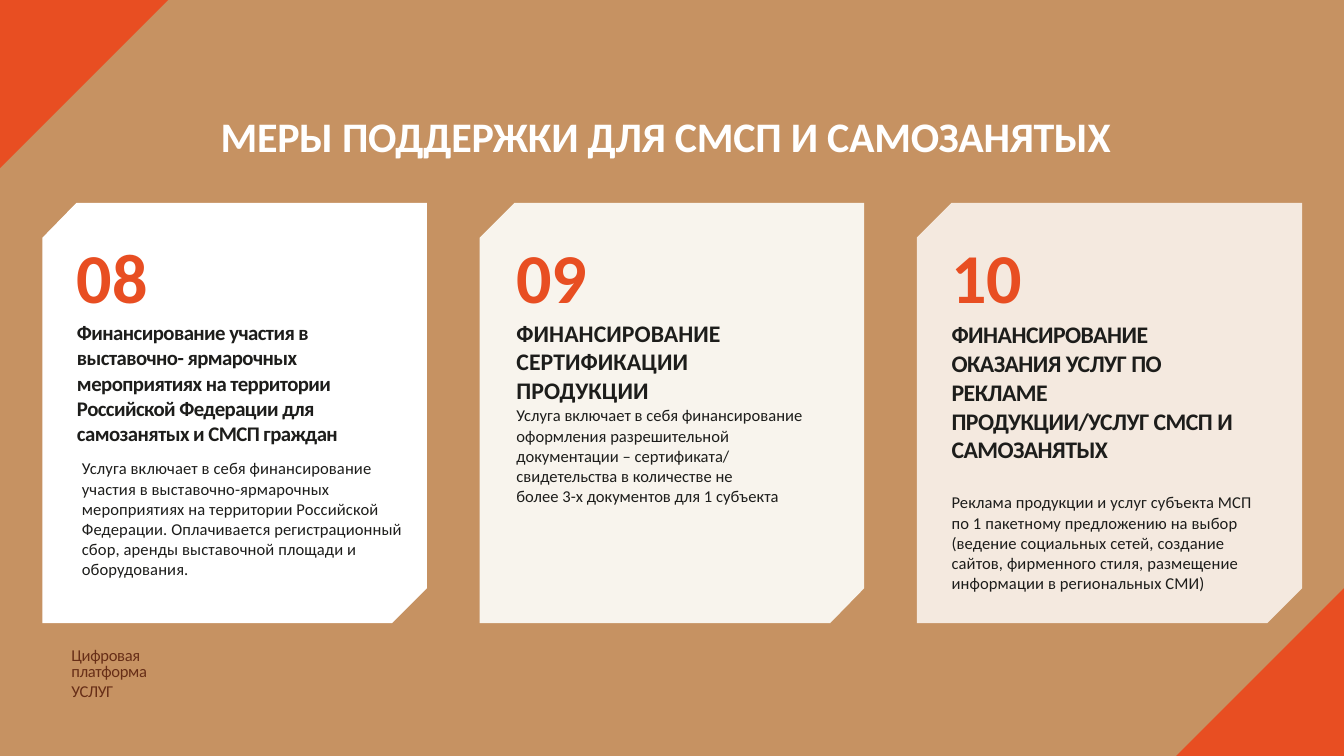
from pptx import Presentation
from pptx.dml.color import RGBColor
from pptx.enum.text import MSO_ANCHOR, PP_ALIGN
from pptx.util import Pt

TOP = MSO_ANCHOR.TOP
LEFT = PP_ALIGN.LEFT
TITLE_ONLY = 5
FONT = "Calibri"
COLORS = {
    "sand": "C69262", "orange": "E84E22", "white": "FFFFFF",
    "cream": "F8F4ED", "blush": "F4E9DF", "ink": "1D1D1B", "brown": "672E17",
}
SLIDE_W, SLIDE_H = 1583.3, 890.6
CORNER = 198
CARD_LEFT, CARD_TOP, CARD_W, CARD_H = 49.7, 239.2, 453.4, 494.6
CARD_STEP, CARD_CUT = 515.3, 40.7
TEXT_TOP = 264.2

NUMBER = dict(size=82.5, color="orange", bold=True, before=11)
HEADING = dict(size=28, color="ink", bold=True, spacing=1.01, before=2.6)
BODY = dict(size=19.5, color="ink", spacing=1.01, before=0.8)

CARDS = [
    dict(fill="white", left=90, width=402.5, height=389.5, paragraphs=[
        ("08", NUMBER),
        ("Финансирование участия в выставочно- ярмарочных мероприятиях на "
         "территории Российской Федерации для самозанятых и СМСП граждан",
         HEADING | dict(size=24.5, tracking=-0.65)),
        ("Услуга включает в себя финансирование участия в "
         "выставочно-ярмарочных мероприятиях на территории Российской "
         "Федерации. Оплачивается регистрационный сбор, аренды выставочной "
         "площади и оборудования.",
         BODY | dict(before=14.8, indent=6.5, tracking=0.1)),
    ]),
    dict(fill="cream", left=607.7, width=355.7, height=334, paragraphs=[
        ("09", NUMBER),
        ("ФИНАНСИРОВАНИЕ СЕРТИФИКАЦИИ ПРОДУКЦИИ",
         HEADING | dict(before=0.8, right=10, tracking=0.1)),
        ("Услуга включает в себя финансирование оформления разрешительной "
         "документации – сертификата/ свидетельства в количестве не",
         BODY | dict(right=10)),
        ("более 3-х документов для 1 субъекта",
         BODY | dict(spacing=1.0, before=0.2)),
    ]),
    dict(fill="blush", left=1120.3, width=360, height=437.8, paragraphs=[
        ("10", NUMBER),
        ("ФИНАНСИРОВАНИЕ ОКАЗАНИЯ УСЛУГ ПО РЕКЛАМЕ ПРОДУКЦИИ/УСЛУГ СМСП "
         "И САМОЗАНЯТЫХ", HEADING | dict(right=24, tracking=-0.6)),
        ("Реклама продукции и услуг субъекта МСП по 1 пакетному предложению "
         "на выбор (ведение социальных сетей, создание сайтов, фирменного "
         "стиля, размещение информации в региональных СМИ)",
         BODY | dict(before=33.6, tracking=0.1)),
    ]),
]


def rgb(name):
    """Return the named colour."""
    return RGBColor.from_string(COLORS[name])


def add_outline(slide, points, color):
    """Draw a filled closed outline through points given in points."""
    builder = slide.shapes.build_freeform(*points[0], scale=Pt(1))
    builder.add_line_segments(points[1:], close=True)
    outline = builder.convert_to_shape()
    outline.shadow.inherit = False
    outline.fill.solid()
    outline.fill.fore_color.rgb = rgb(color)
    outline.line.fill.background()


def write(paragraph, text, *, size, color, bold=False, before=0, spacing=1.0,
          indent=0.7, right=0, tracking=0):
    """Fill a paragraph with one formatted run."""
    paragraph.alignment = LEFT
    paragraph.space_before = Pt(before)
    paragraph.line_spacing = spacing
    properties = paragraph._p.get_or_add_pPr()
    properties.set("marL", str(Pt(indent)))
    properties.set("marR", str(Pt(right)))
    properties.set("indent", "0")
    run = paragraph.add_run()
    run.text = text
    run.font.name = FONT
    run.font.size = Pt(size)
    run.font.bold = bold
    run.font.color.rgb = rgb(color)
    run._r.get_or_add_rPr().set("spc", str(round(tracking * 100)))


def fill_frame(frame, paragraphs, top_inset=0):
    """Set up a text frame and write its paragraphs."""
    frame.word_wrap = True
    frame.vertical_anchor = TOP
    frame.margin_left = frame.margin_right = frame.margin_bottom = 0
    frame.margin_top = Pt(top_inset)
    for index, (text, style) in enumerate(paragraphs):
        paragraph = frame.add_paragraph() if index else frame.paragraphs[0]
        write(paragraph, text, **style)


def add_text(slide, left, top, width, height, paragraphs, top_inset=0):
    """Add a text box with formatted paragraphs."""
    box = slide.shapes.add_textbox(Pt(left), Pt(top), Pt(width), Pt(height))
    fill_frame(box.text_frame, paragraphs, top_inset)


def add_card(slide, index, card):
    """Add a card with two cut corners and its text."""
    left, top = CARD_LEFT + index * CARD_STEP, CARD_TOP
    right, bottom = left + CARD_W, top + CARD_H
    add_outline(slide, [
        (right, top), (left + CARD_CUT, top), (left, top + CARD_CUT),
        (left, bottom), (right - CARD_CUT, bottom), (right, bottom - CARD_CUT),
    ], card["fill"])
    add_text(slide, card["left"], TEXT_TOP, card["width"], card["height"],
             card["paragraphs"], top_inset=10.8)


def set_title(slide, text):
    """Place and format the slide title."""
    title = slide.shapes.title
    title.left, title.top = Pt(259.2), Pt(129.6)
    title.width, title.height = Pt(1060), Pt(61.2)
    style = dict(size=49.5, color="white", bold=True, before=1.1, tracking=-0.25)
    fill_frame(title.text_frame, [(text, style)], top_inset=0.7)


def main():
    """Build and save the slide."""
    deck = Presentation()
    deck.slide_width, deck.slide_height = Pt(SLIDE_W), Pt(SLIDE_H)
    slide = deck.slides.add_slide(deck.slide_layouts[TITLE_ONLY])
    slide.background.fill.solid()
    slide.background.fill.fore_color.rgb = rgb("sand")

    add_outline(slide, [(SLIDE_W, SLIDE_H - CORNER), (SLIDE_W - CORNER, SLIDE_H),
                        (SLIDE_W, SLIDE_H)], "orange")
    add_outline(slide, [(CORNER, 0), (0, 0), (0, CORNER)], "orange")
    set_title(slide, "МЕРЫ ПОДДЕРЖКИ ДЛЯ СМСП И САМОЗАНЯТЫХ")
    for index, card in enumerate(CARDS):
        add_card(slide, index, card)

    platform = dict(size=19.5, color="brown", tracking=-0.4)
    add_text(slide, 83.5, 763.2, 175.7, 45.4, [
        ("Цифровая платформа", platform | dict(spacing=Pt(19.6), right=60)),
        ("УСЛУГ", platform | dict(before=0.2)),
    ])
    deck.save("out.pptx")


if __name__ == "__main__":
    main()
